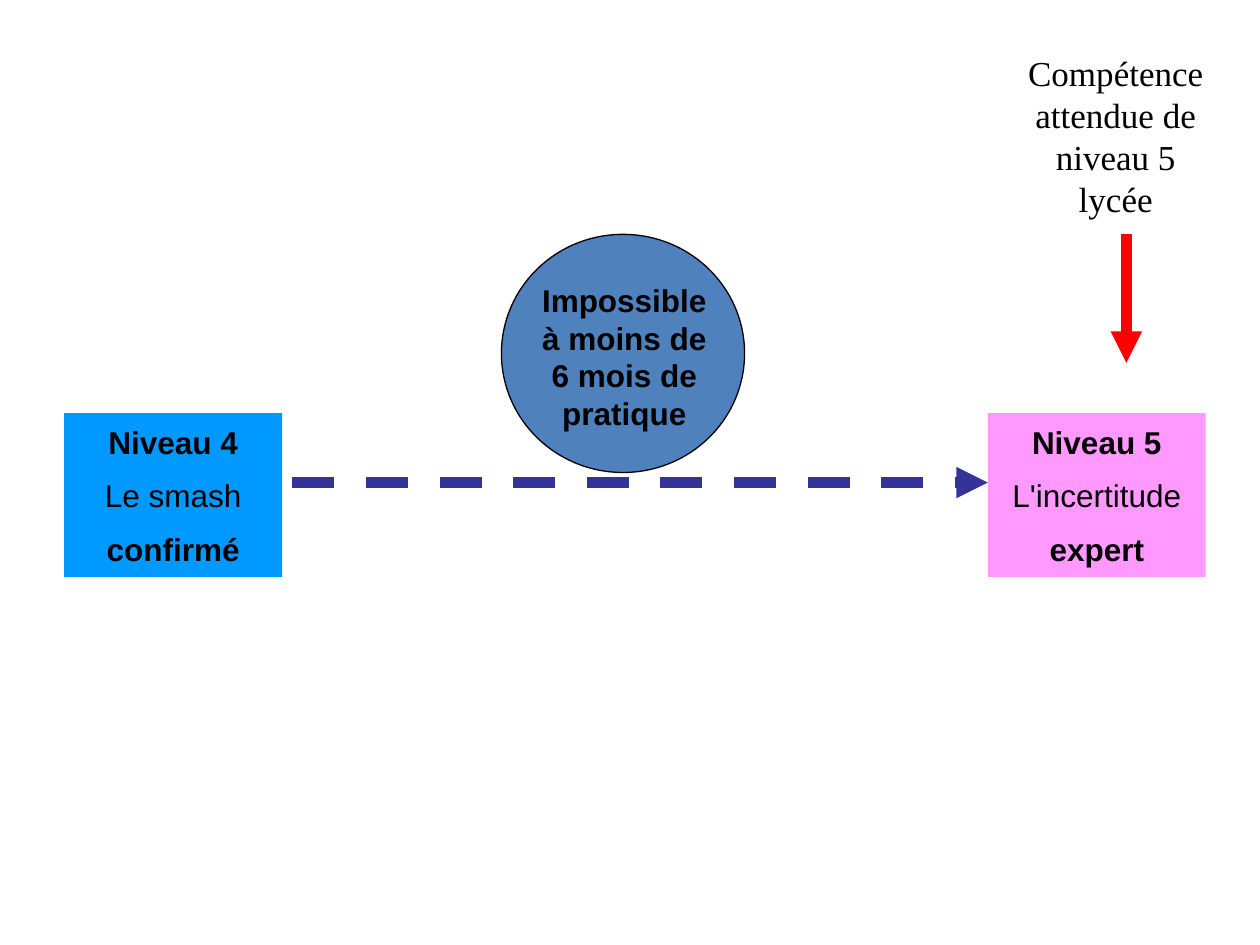
from lxml.etree import SubElement
from pptx import Presentation
from pptx.dml.color import RGBColor
from pptx.enum.dml import MSO_LINE
from pptx.enum.shapes import MSO_CONNECTOR, MSO_SHAPE
from pptx.enum.text import MSO_ANCHOR, PP_ALIGN
from pptx.oxml.ns import qn
from pptx.util import Inches, Pt


def color(value):
    return RGBColor.from_string(value)


def add_text(shape, text, size=18, font="Arial", bold_lines=(), anchor=MSO_ANCHOR.TOP):
    frame = shape.text_frame
    frame.word_wrap = True
    frame.vertical_anchor = anchor
    frame.text = text
    for index, paragraph in enumerate(frame.paragraphs):
        paragraph.alignment = PP_ALIGN.CENTER
        paragraph.line_spacing = Pt(size * 1.2)
        paragraph.space_before = Pt(size / 2 if index else 0)
        paragraph.font.size = Pt(size)
        paragraph.font.name = font
        paragraph.font.bold = index in bold_lines
        paragraph.font.color.rgb = color("000000")


presentation = Presentation()
presentation.slide_width = Inches(10)
presentation.slide_height = Inches(7.5)
slide = presentation.slides.add_slide(presentation.slide_layouts[6])
shapes = slide.shapes

arrows = [
    (2.32, 3.83, 7.84, 3.83, "333399", MSO_LINE.DASH),
    (8.94, 1.86, 8.94, 2.88, "FF0000", MSO_LINE.SOLID),
]
for start_x, start_y, end_x, end_y, line_color, dash in arrows:
    arrow = shapes.add_connector(
        MSO_CONNECTOR.STRAIGHT,
        Inches(start_x), Inches(start_y), Inches(end_x), Inches(end_y),
    )
    arrow.line.color.rgb = color(line_color)
    arrow.line.width = Pt(6)
    arrow.line.dash_style = dash
    SubElement(arrow.line._get_or_add_ln(), qn("a:tailEnd"), type="triangle")
    SubElement(arrow._element.spPr, qn("a:effectLst"))

goal = shapes.add_textbox(Inches(7.99), Inches(0.36), Inches(1.73), Inches(1.43))
add_text(goal, "Compétence attendue de niveau 5 lycée", size=20, font="Times New Roman")

circle = shapes.add_shape(
    MSO_SHAPE.OVAL, Inches(3.98), Inches(1.86), Inches(1.93), Inches(1.89)
)
circle.shadow.inherit = False
circle.fill.solid()
circle.fill.fore_color.rgb = color("4F81BD")
circle.line.color.rgb = color("000000")
circle.line.width = Pt(0.75)

warning = shapes.add_textbox(Inches(4.13), Inches(2.18), Inches(1.65), Inches(1.3))
add_text(warning, "Impossible à moins de 6 mois de pratique", bold_lines=(0,))

levels = [
    (0.51, "0099FF", "Niveau 4\nLe smash\nconfirmé"),
    (7.84, "FF99FF", "Niveau 5\nL'incertitude\nexpert"),
]
for left, fill_color, text in levels:
    level = shapes.add_shape(
        MSO_SHAPE.RECTANGLE, Inches(left), Inches(3.28), Inches(1.73), Inches(1.3)
    )
    level.shadow.inherit = False
    level.fill.solid()
    level.fill.fore_color.rgb = color(fill_color)
    level.line.fill.background()
    add_text(level, text, bold_lines=(0, 2), anchor=MSO_ANCHOR.MIDDLE)

presentation.save("out.pptx")
